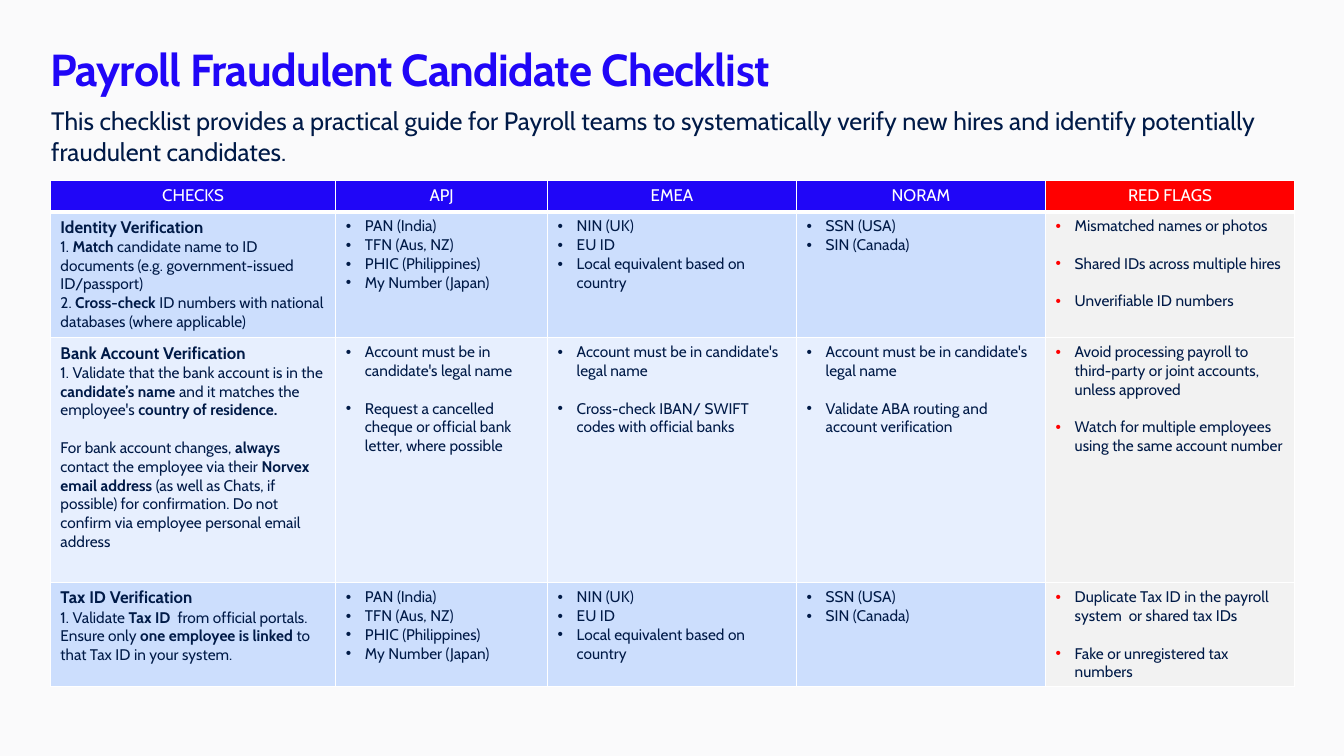
from dataclasses import dataclass

from lxml import etree
from pptx import Presentation
from pptx.dml.color import RGBColor
from pptx.enum.text import MSO_ANCHOR, PP_ALIGN
from pptx.oxml.ns import qn
from pptx.util import Inches, Pt

LEFT, CENTER = PP_ALIGN.LEFT, PP_ALIGN.CENTER
TOP, MIDDLE = MSO_ANCHOR.TOP, MSO_ANCHOR.MIDDLE

TITLE = "Payroll Fraudulent Candidate Checklist"
SUBTITLE = (
    "This checklist provides a practical guide for Payroll teams to systematically "
    "verify new hires and identify potentially fraudulent candidates."
)
HEADERS = ["CHECKS", "APJ", "EMEA", "NORAM", "RED FLAGS"]
REGION_IDS = [
    ["PAN (India)", "TFN (Aus, NZ)", "PHIC (Philippines)", "My Number (Japan)"],
    ["NIN (UK)", "EU ID", "Local equivalent based on country"],
    ["SSN (USA)", "SIN (Canada)"],
]
LEGAL_NAME = "Account must be in candidate's legal name"

# Text between ** marks is bold. A "spaced" check has gaps between its items.
CHECKS = [
    {
        "name": "Identity Verification",
        "steps": [
            "1. **Match** candidate name to ID documents (e.g. government-issued ID/passport)",
            "2. **Cross-check **ID numbers with national databases (where applicable)",
        ],
        "regions": REGION_IDS,
        "flags": [
            "Mismatched names or photos",
            "Shared IDs across multiple hires",
            "Unverifiable ID numbers",
        ],
        "spaced": False,
    },
    {
        "name": "Bank Account Verification",
        "steps": [
            "1. Validate that the bank account is in the **candidate’s name **and it "
            "matches the employee's **country of residence.**",
            "For bank account changes, **always** contact the employee via their "
            "**Norvex email address **(as well as Chats, if possible) for confirmation. "
            "Do not confirm via employee personal email address",
        ],
        "regions": [
            [LEGAL_NAME, "Request a cancelled cheque or official bank letter, where possible"],
            [LEGAL_NAME, "Cross-check IBAN/ SWIFT codes with official banks"],
            [LEGAL_NAME, "Validate ABA routing and account verification"],
        ],
        "flags": [
            "Avoid processing payroll to third-party or joint accounts, unless approved",
            "Watch for multiple employees using the same account number",
        ],
        "spaced": True,
    },
    {
        "name": "Tax ID Verification",
        "steps": [
            "1. Validate **Tax ID  **from official portals. Ensure only "
            "**one employee is linked** to that Tax ID in your system.",
        ],
        "regions": REGION_IDS,
        "flags": [
            "Duplicate Tax ID in the payroll system  or shared tax IDs",
            "Fake or unregistered tax numbers",
        ],
        "spaced": False,
    },
]
COLUMN_WIDTHS = [2.83, 2.1, 2.47, 2.47, 2.47]
ROW_HEIGHTS = [0.31, 1.25, 2.43, 1.03]


@dataclass(frozen=True)
class Theme:
    font: str = "Cabin"
    background: str = "FAFAFB"
    blue: str = "2006F7"
    red: str = "FF0000"
    navy: str = "001A47"
    white: str = "FFFFFF"
    flag_fill: str = "F2F2F2"
    band_fills: tuple = ("CCDEFD", "E7EFFE")
    title_size: float = 32
    subtitle_size: float = 18
    heading_size: float = 12
    body_size: float = 11
    item_gap: float = 13.4
    border: float = 1
    header_border: float = 3


THEME = Theme()


def format_paragraph(paragraph, size, color, bold=False, align=LEFT):
    paragraph.alignment = align
    font = paragraph.font
    font.name, font.size, font.bold = THEME.font, Pt(size), bold
    font.color.rgb = RGBColor.from_string(color)


def add_marked_runs(paragraph, text):
    """Split text at ** marks; every second piece is bold."""
    for index, piece in enumerate(text.split("**")):
        if piece:
            run = paragraph.add_run()
            run.text = piece
            if index % 2:
                run.font.bold = True


def add_bullet(paragraph, color):
    properties = paragraph._p.get_or_add_pPr()
    properties.set("marL", str(Inches(0.19)))
    properties.set("indent", str(-Inches(0.19)))
    bullet_color = etree.SubElement(properties, qn("a:buClr"))
    etree.SubElement(bullet_color, qn("a:srgbClr"), val=color)
    etree.SubElement(properties, qn("a:buFont"), typeface="Arial")
    etree.SubElement(properties, qn("a:buChar"), char="•")


def style_cell(cell, fill, bottom=THEME.border):
    cell.fill.solid()
    cell.fill.fore_color.rgb = RGBColor.from_string(fill)
    properties = cell._tc.get_or_add_tcPr()
    for index, side in enumerate("LRTB"):
        width = bottom if side == "B" else THEME.border
        line = etree.Element(qn(f"a:ln{side}"), w=str(Pt(width)))
        line_fill = etree.SubElement(line, qn("a:solidFill"))
        etree.SubElement(line_fill, qn("a:srgbClr"), val=THEME.white)
        properties.insert(index, line)


def fill_list(cell, items, bullet_color, spaced):
    frame = cell.text_frame
    for index, item in enumerate(items):
        paragraph = frame.add_paragraph() if index else frame.paragraphs[0]
        add_bullet(paragraph, bullet_color)
        if index and spaced:
            paragraph.space_before = Pt(THEME.item_gap)
        format_paragraph(paragraph, THEME.body_size, THEME.navy)
        add_marked_runs(paragraph, item)


def fill_check(cell, check):
    frame = cell.text_frame
    heading = frame.paragraphs[0]
    format_paragraph(heading, THEME.heading_size, THEME.navy, bold=True)
    add_marked_runs(heading, check["name"])
    for index, step in enumerate(check["steps"]):
        paragraph = frame.add_paragraph()
        if index and check["spaced"]:
            paragraph.space_before = Pt(THEME.item_gap)
        format_paragraph(paragraph, THEME.body_size, THEME.navy)
        add_marked_runs(paragraph, step)


def add_titles(slide):
    title = slide.shapes.title
    title.left, title.top, title.width, title.height = map(Inches, (0.5, 0.37, 7.7, 0.62))
    frame = title.text_frame
    frame.margin_left = frame.margin_right = frame.margin_top = frame.margin_bottom = 0
    frame.vertical_anchor = MIDDLE
    frame.text = TITLE
    format_paragraph(frame.paragraphs[0], THEME.title_size, THEME.blue, bold=True)
    frame.paragraphs[0].runs[0]._r.get_or_add_rPr().set("spc", "-50")

    subtitle = slide.shapes.add_textbox(*map(Inches, (0.41, 1, 12.28, 0.62)))
    frame = subtitle.text_frame
    frame.word_wrap = True
    frame.text = SUBTITLE
    format_paragraph(frame.paragraphs[0], THEME.subtitle_size, THEME.navy)


def add_checklist(slide):
    table = slide.shapes.add_table(
        len(ROW_HEIGHTS), len(COLUMN_WIDTHS), Inches(0.5), Inches(1.79),
        Inches(sum(COLUMN_WIDTHS)), Inches(sum(ROW_HEIGHTS)),
    ).table
    for column, width in zip(table.columns, COLUMN_WIDTHS):
        column.width = Inches(width)
    for row, height in zip(table.rows, ROW_HEIGHTS):
        row.height = Inches(height)

    for cell, header in zip(table.rows[0].cells, HEADERS):
        style_cell(cell, THEME.red if header == HEADERS[-1] else THEME.blue, THEME.header_border)
        cell.text = header
        format_paragraph(cell.text_frame.paragraphs[0], THEME.heading_size, THEME.white, align=CENTER)

    for index, check in enumerate(CHECKS):
        check_cell, *region_cells, flag_cell = table.rows[index + 1].cells
        for cell in (check_cell, *region_cells):
            style_cell(cell, THEME.band_fills[index % 2])
        style_cell(flag_cell, THEME.flag_fill)
        fill_check(check_cell, check)
        for cell, items in zip(region_cells, check["regions"]):
            fill_list(cell, items, THEME.navy, check["spaced"])
        fill_list(flag_cell, check["flags"], THEME.red, spaced=True)


def main():
    presentation = Presentation()
    presentation.slide_width, presentation.slide_height = Inches(13.33), Inches(7.5)
    slide = presentation.slides.add_slide(presentation.slide_layouts[5])
    slide.background.fill.solid()
    slide.background.fill.fore_color.rgb = RGBColor.from_string(THEME.background)
    add_titles(slide)
    add_checklist(slide)
    presentation.save("out.pptx")


if __name__ == "__main__":
    main()
